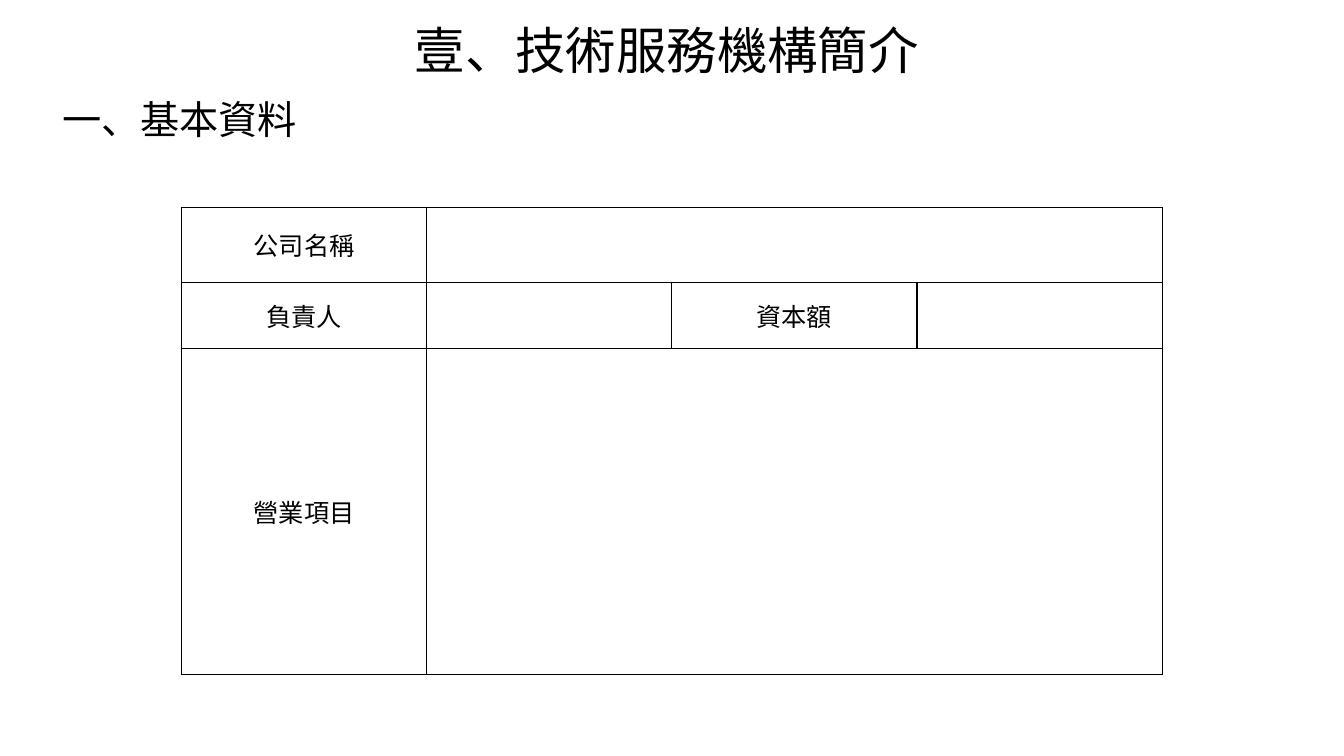
from dataclasses import dataclass

from lxml import etree
from pptx import Presentation
from pptx import util as u
from pptx.dml import color
from pptx.enum import text
from pptx.oxml import ns

FONT = "Noto Sans CJK SC"
INK = "000000"
COL = 175.14
ROWS = (53.3, 47.5, 232.6)


@dataclass
class Label:
    row: int
    col: int
    words: str


LABELS = (
    Label(0, 0, "公司名稱"),
    Label(1, 0, "負責人"),
    Label(1, 2, "資本額"),
    Label(2, 0, "營業項目"),
)
WIDE = (0, 2)


def paint(target, code: str) -> None:
    target.rgb = color.RGBColor.from_string(code)


def write(frame, words: str, size: float, align) -> None:
    frame.text = words
    line = frame.paragraphs[0]
    line.alignment = align
    for run in line.runs:
        run.font.size = u.Pt(size)
        run.font.name = FONT
        paint(run.font.color, INK)
        east = etree.SubElement(run.font._element, ns.qn("a:ea"))
        east.set("typeface", FONT)


def border(cell, width: float) -> None:
    props = cell._tc.get_or_add_tcPr()
    for order, side in enumerate(("lnL", "lnR", "lnT", "lnB")):
        edge = etree.Element(ns.qn(f"a:{side}"), w=str(u.Pt(width)))
        fill = etree.SubElement(edge, ns.qn("a:solidFill"))
        etree.SubElement(fill, ns.qn("a:srgbClr"), val=INK)
        props.insert(order, edge)


def add_title(slide) -> None:
    title = slide.shapes.title
    title.left, title.top = u.Pt(66.24), u.Pt(12.24)
    title.width, title.height = u.Pt(828), u.Pt(51.84)
    frame = title.text_frame
    frame.vertical_anchor = text.MSO_ANCHOR.MIDDLE
    write(frame, "壹、技術服務機構簡介 ", 36, text.PP_ALIGN.CENTER)
    frame.paragraphs[0].line_spacing = 0.9


def add_heading(slide) -> None:
    box = slide.shapes.add_textbox(u.Pt(37.44), u.Pt(64.8), u.Pt(184.32), u.Pt(41.04))
    frame = box.text_frame
    frame.word_wrap = False
    frame.auto_size = text.MSO_AUTO_SIZE.SHAPE_TO_FIT_TEXT
    write(frame, "一、基本資料", 28, text.PP_ALIGN.LEFT)


def add_form(slide) -> None:
    table = slide.shapes.add_table(
        len(ROWS), 4, u.Pt(129.6), u.Pt(148.32), u.Pt(4 * COL), u.Pt(sum(ROWS))
    ).table
    table.first_row = table.horz_banding = False
    for col in table.columns:
        col.width = u.Pt(COL)
    for row, height in zip(table.rows, ROWS):
        row.height = u.Pt(height)
    for cell in table.iter_cells():
        cell.fill.background()
        cell.vertical_anchor = text.MSO_ANCHOR.MIDDLE
        cell.margin_left = cell.margin_right = u.Pt(5)
        cell.margin_top = cell.margin_bottom = u.Pt(0)
        border(cell, 1)
    for row in WIDE:
        table.cell(row, 1).merge(table.cell(row, 3))
    for label in LABELS:
        cell = table.cell(label.row, label.col)
        write(cell.text_frame, label.words, 18, text.PP_ALIGN.CENTER)


def main() -> None:
    deck = Presentation()
    deck.slide_width, deck.slide_height = u.Pt(960), u.Pt(540)
    slide = deck.slides.add_slide(deck.slide_layouts[5])
    add_title(slide)
    add_form(slide)
    add_heading(slide)
    deck.save("out.pptx")


if __name__ == "__main__":
    main()
